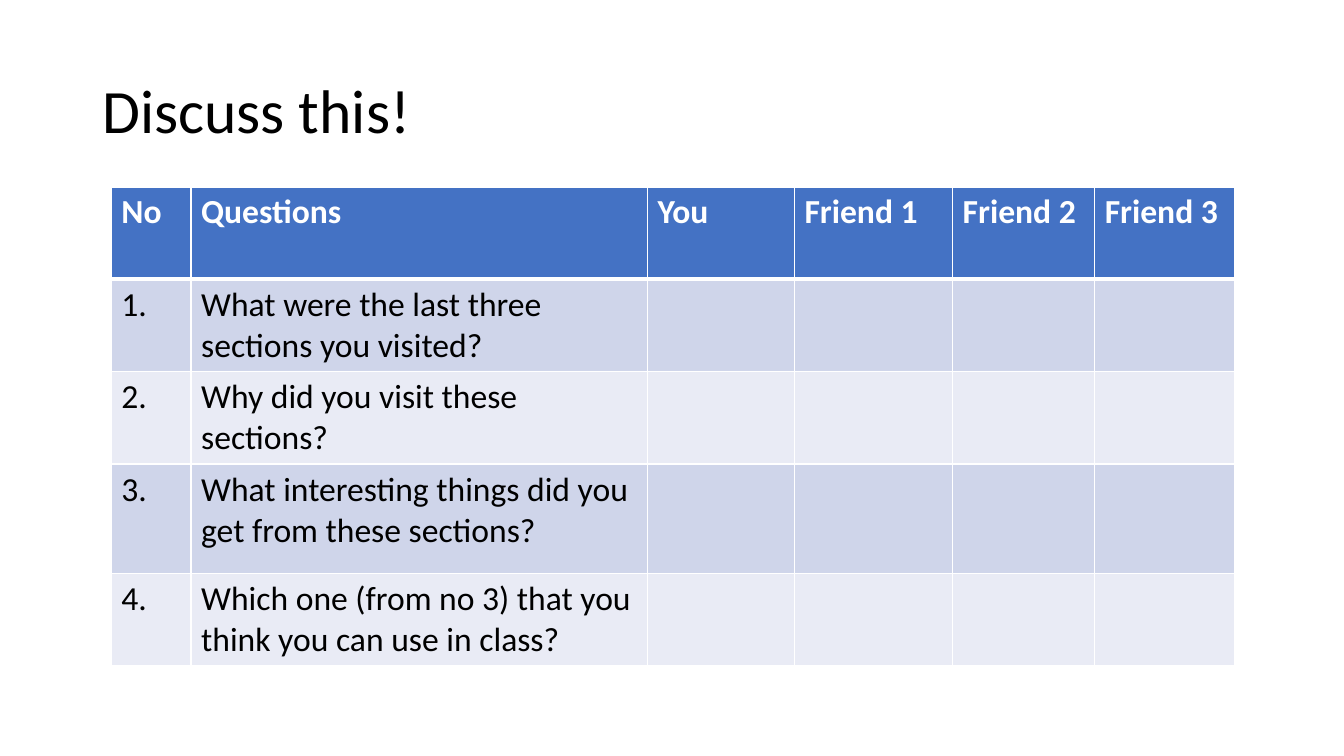
"""Build the "Discuss this!" slide with its discussion table."""
import pptx
import pptx.dml.color
import pptx.enum.text
import pptx.oxml.ns
import pptx.util
from lxml import etree

Pt = pptx.util.Pt
RGBColor = pptx.dml.color.RGBColor

WHITE = RGBColor(0xFF, 0xFF, 0xFF)
BLACK = RGBColor(0x00, 0x00, 0x00)
HEADER_BLUE = RGBColor(0x44, 0x72, 0xC4)
BAND_DARK = RGBColor(0xCF, 0xD5, 0xEA)
BAND_LIGHT = RGBColor(0xE9, 0xEB, 0xF5)
FONT = "Calibri"

HEADINGS = ["No", "Questions", "You", "Friend 1", "Friend 2", "Friend 3"]
QUESTIONS = [
    "What were the last three sections you visited?",
    "Why did you visit these sections?",
    "What interesting things did you get from these sections?",
    "Which one (from no 3) that you think you can use in class?",
]
COLUMN_WIDTHS = [57, 326, 105, 113, 101.5, 100]
ROW_HEIGHTS = [66, 66, 66, 78, 66]


def add_run(paragraph, text, size, color, bold=False):
    run = paragraph.add_run()
    run.text = text
    run.font.name = FONT
    run.font.size = Pt(size)
    run.font.bold = bold
    run.font.color.rgb = color


def add_title(slide, text):
    title = slide.shapes.title
    title.left, title.top, title.width, title.height = Pt(66), Pt(28.75), Pt(828), Pt(104.4)
    frame = title.text_frame
    frame.auto_size = pptx.enum.text.MSO_AUTO_SIZE.NONE
    frame.vertical_anchor = pptx.enum.text.MSO_ANCHOR.MIDDLE
    paragraph = frame.paragraphs[0]
    paragraph.alignment = pptx.enum.text.PP_ALIGN.LEFT
    paragraph.line_spacing = 0.9
    add_run(paragraph, text, 44, BLACK)


def set_borders(cell, widths):
    qn = pptx.oxml.ns.qn
    properties = cell._tc.get_or_add_tcPr()
    for position, (side, width) in enumerate(widths.items()):
        border = etree.Element(qn(f"a:{side}"), w=str(Pt(width)))
        fill = etree.SubElement(border, qn("a:solidFill"))
        etree.SubElement(fill, qn("a:srgbClr"), val=str(WHITE))
        properties.insert(position, border)


def fill_cell(cell, text, row):
    is_header = row == 0
    cell.fill.solid()
    cell.fill.fore_color.rgb = HEADER_BLUE if is_header else (BAND_LIGHT, BAND_DARK)[row % 2]
    set_borders(cell, {"lnL": 1, "lnR": 1, "lnT": 3 if row == 1 else 1, "lnB": 3 if is_header else 1})
    if text:
        add_run(cell.text_frame.paragraphs[0], text, 24, WHITE if is_header else BLACK, is_header)


def add_discussion_table(slide):
    answers = [""] * (len(HEADINGS) - 2)
    contents = [HEADINGS] + [
        [f"{number}.", question, *answers] for number, question in enumerate(QUESTIONS, 1)
    ]
    table = slide.shapes.add_table(
        len(contents), len(HEADINGS), Pt(79.5), Pt(133.5),
        Pt(sum(COLUMN_WIDTHS)), Pt(sum(ROW_HEIGHTS)),
    ).table
    for column, width in zip(table.columns, COLUMN_WIDTHS):
        column.width = Pt(width)
    for row, height in zip(table.rows, ROW_HEIGHTS):
        row.height = Pt(height)
    for row, texts in enumerate(contents):
        for column, text in enumerate(texts):
            fill_cell(table.cell(row, column), text, row)


def main():
    presentation = pptx.Presentation()
    presentation.slide_width, presentation.slide_height = Pt(960), Pt(540)
    slide = presentation.slides.add_slide(presentation.slide_layouts[5])
    add_title(slide, "Discuss this!")
    add_discussion_table(slide)
    presentation.save("out.pptx")


if __name__ == "__main__":
    main()
